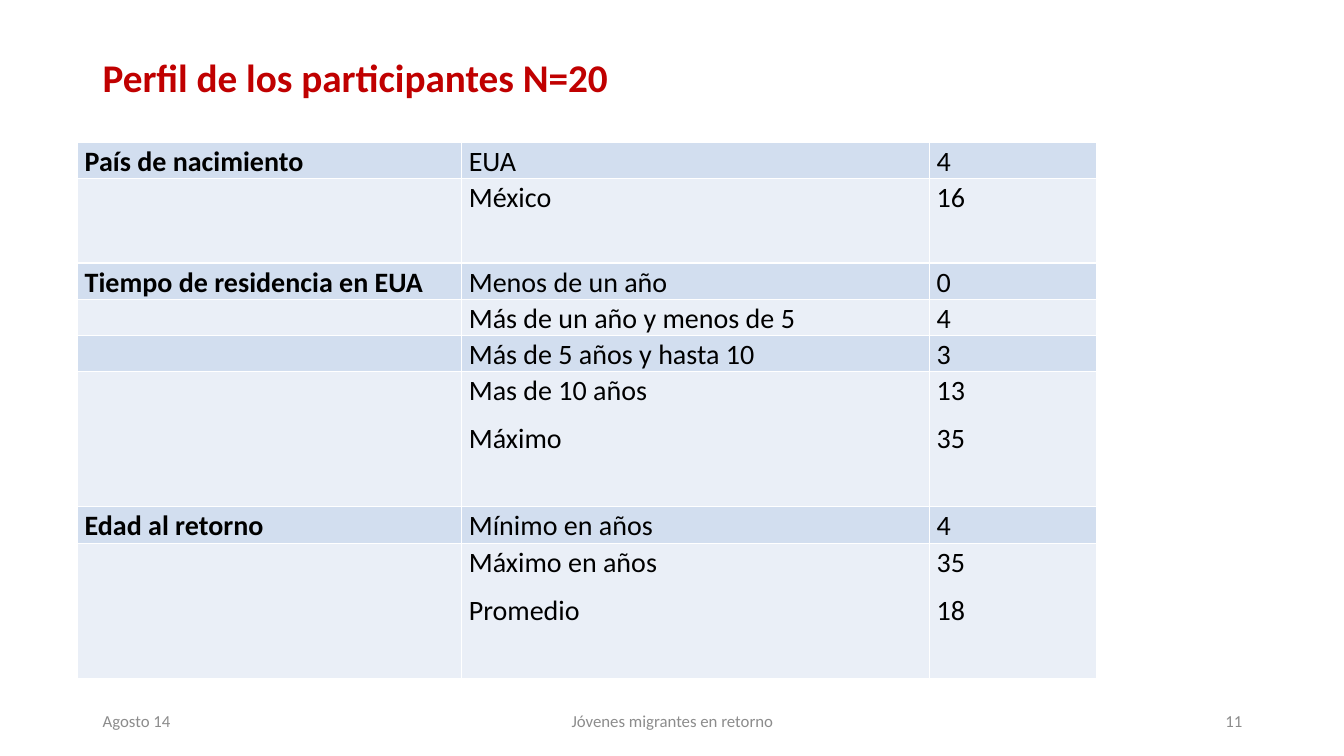
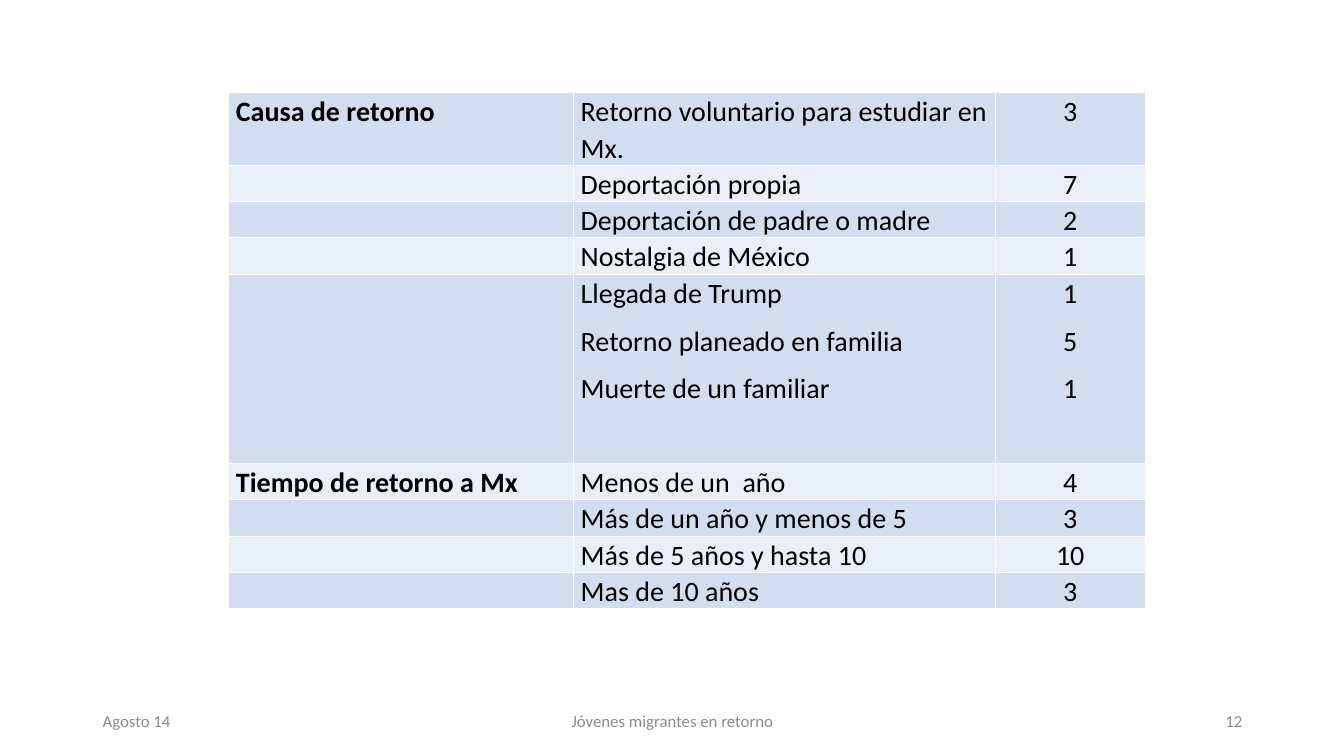
from pptx import Presentation
from pptx.dml.color import RGBColor
from pptx.enum.text import MSO_ANCHOR, PP_ALIGN
from pptx.util import Inches, Pt

COLORS = {
    "title": "C00000",
    "text": "000000",
    "footer": "8C8C8C",
    "band_dark": "D2DEEF",
    "band_light": "EAEFF7",
}
FORMATS = {
    "title": {"name": "Calibri", "size": Pt(28), "bold": True},
    "label": {"name": "Calibri", "size": Pt(20), "bold": True},
    "text": {"name": "Calibri", "size": Pt(20), "bold": False},
    "footer": {"name": "Calibri", "size": Pt(12), "bold": False},
}
CELL_MARGINS = {
    "margin_left": Inches(0.07),
    "margin_right": Inches(0.07),
    "margin_top": 0,
    "margin_bottom": 0,
}
CELL_PARAGRAPH = {"line_spacing": 1.07, "space_after": Pt(8)}
LINE_HEIGHT = 0.36

PROFILE_ROWS = [
    ("País de nacimiento", "EUA", "4", LINE_HEIGHT),
    ("", "México", "16", 0.84),
    ("Tiempo de residencia en EUA", "Menos de un año", "0", LINE_HEIGHT),
    ("", "Más de un año y menos de 5", "4", LINE_HEIGHT),
    ("", "Más de 5 años y hasta 10", "3", LINE_HEIGHT),
    ("", "Mas de 10 años\nMáximo", "13\n35", 1.34),
    ("Edad al retorno", "Mínimo en años", "4", LINE_HEIGHT),
    ("", "Máximo en años\nPromedio", "35\n18", 1.34),
]
RETURN_ROWS = [
    ("Causa de retorno", "Retorno voluntario para estudiar en Mx.", "3", 2 * LINE_HEIGHT),
    ("", "Deportación propia", "7", LINE_HEIGHT),
    ("", "Deportación de padre o madre", "2", LINE_HEIGHT),
    ("", "Nostalgia de México", "1", LINE_HEIGHT),
    ("", "Llegada de Trump\nRetorno planeado en familia\nMuerte de un familiar", "1\n5\n1", 1.88),
    ("Tiempo de retorno a Mx", "Menos de un  año", "4", LINE_HEIGHT),
    ("", "Más de un año y menos de 5", "3", LINE_HEIGHT),
    ("", "Más de 5 años y hasta 10", "10", LINE_HEIGHT),
    ("", "Mas de 10 años", "3", LINE_HEIGHT),
]


def set_all(target, values):
    for name, value in values.items():
        setattr(target, name, value)


class Deck:
    def __init__(self):
        self.prs = Presentation()
        self.prs.slide_width = Inches(13.33)
        self.prs.slide_height = Inches(7.5)
        self.s = None

    def slide(self, number):
        self.s = self.prs.slides.add_slide(self.prs.slide_layouts[6])
        self.text("Agosto 14", (0.92, 6.95, 3, 0.4), "footer")
        self.text("Jóvenes migrantes en retorno", (4.42, 6.95, 4.5, 0.4), "footer", PP_ALIGN.CENTER)
        self.text(str(number), (9.42, 6.95, 3, 0.4), "footer", PP_ALIGN.RIGHT)

    def run(self, p, text, style):
        r = p.add_run()
        r.text = text
        set_all(r.font, FORMATS[style])
        r.font.color.rgb = RGBColor.from_string(COLORS.get(style, COLORS["text"]))

    def text(self, text, box, style, align=PP_ALIGN.LEFT):
        tf = self.s.shapes.add_textbox(*map(Inches, box)).text_frame
        set_all(tf, {"word_wrap": True, "vertical_anchor": MSO_ANCHOR.MIDDLE})
        p = tf.paragraphs[0]
        p.alignment = align
        self.run(p, text, style)
        return p

    def title(self, text):
        self.text(text, (0.92, 0.07, 11.5, 1.45), "title").line_spacing = 0.9

    def cell(self, cell, text, style, align, band):
        set_all(cell, CELL_MARGINS)
        cell.fill.solid()
        cell.fill.fore_color.rgb = RGBColor.from_string(COLORS[band])
        tf = cell.text_frame
        for i, line in enumerate(text.splitlines()):
            p = tf.add_paragraph() if i else tf.paragraphs[0]
            set_all(p, CELL_PARAGRAPH)
            p.alignment = align
            self.run(p, line, style)

    def table(self, left, top, widths, rows, value_align):
        height = sum(row[-1] for row in rows)
        box = map(Inches, (left, top, sum(widths), height))
        table = self.s.shapes.add_table(len(rows), len(widths), *box).table
        set_all(table, {"first_row": False, "horz_banding": False})
        for column, width in zip(table.columns, widths):
            column.width = Inches(width)
        styles = ("label", "text", "text")
        aligns = (PP_ALIGN.LEFT, PP_ALIGN.LEFT, value_align)
        for i, (*texts, row_height) in enumerate(rows):
            table.rows[i].height = Inches(row_height)
            band = "band_light" if i % 2 else "band_dark"
            for j, (text, style, align) in enumerate(zip(texts, styles, aligns)):
                self.cell(table.cell(i, j), text, style, align, band)


def main():
    deck = Deck()
    deck.slide(11)
    deck.title("Perfil de los participantes N=20")
    deck.table(0.77, 1.41, (3.81, 4.64, 1.66), PROFILE_ROWS, PP_ALIGN.LEFT)
    deck.slide(12)
    deck.table(2.27, 0.92, (3.42, 4.18, 1.49), RETURN_ROWS, PP_ALIGN.CENTER)
    deck.prs.save("out.pptx")


if __name__ == "__main__":
    main()
